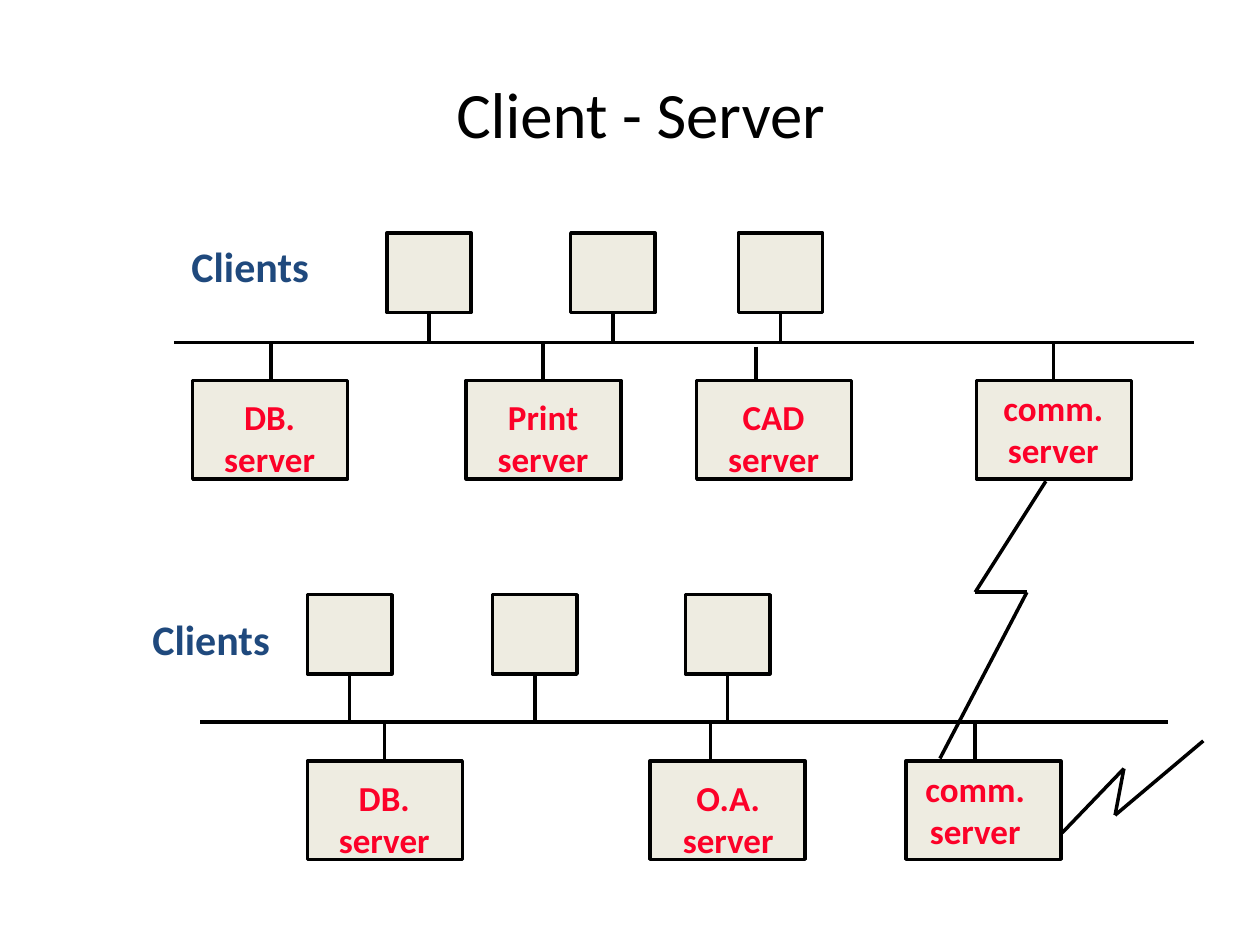
"""Build the Client - Server network slide."""
from itertools import pairwise

from lxml import etree
from pptx import Presentation
from pptx import util as u
from pptx.dml.color import RGBColor
from pptx.enum import shapes, text
from pptx.oxml.ns import qn

COLORS = {"ink": "000000", "box": "EEECE1", "heading": "1F497D", "server": "FC0128"}
FONT = "Calibri"
CLIENT_SIZE = (0.67, 0.63)
SERVER_SIZE = (1.23, 0.78)

NETWORKS = [
    {
        "bus": (1.38, 9.48, 2.72),
        "heading": (1.47, 1.89),
        "client_top": 1.85,
        "clients": [3.07, 4.53, 5.86],
        "server_top": 3.02,
        "servers": [
            {"name": "DB.", "left": 1.53, "label": 2.14, "wire": 2.15},
            {"name": "Print", "left": 3.7, "label": 4.31, "wire": 4.31},
            {"name": "CAD", "left": 5.53, "label": 6.14, "wire": 6, "gap": 0.03},
            {"name": "comm.", "left": 7.75, "label": 8.36, "wire": 8.36},
        ],
    },
    {
        "bus": (1.59, 9.27, 5.73),
        "heading": (1.16, 4.85),
        "client_top": 4.72,
        "clients": [2.44, 3.91, 5.44],
        "server_top": 6.04,
        "servers": [
            {"name": "DB.", "left": 2.44, "label": 3.05, "wire": 3.05},
            {"name": "O.A.", "left": 5.16, "label": 5.78, "wire": 5.64},
            {"name": "comm.", "left": 7.19, "label": 7.74, "wire": 7.74},
        ],
    },
]

RADIO_LINKS = [
    [(8.3, 3.82), (7.74, 4.7), (8.15, 4.7), (7.46, 6.02)],
    [(8.43, 6.61), (8.92, 6.1), (8.85, 6.47), (9.55, 5.88)],
]


def color(name):
    """Return the named palette colour."""
    return RGBColor.from_string(COLORS[name])


def add_box(slide, left, top, size):
    """Add an outlined rectangle."""
    box = slide.shapes.add_shape(
        shapes.MSO_SHAPE.RECTANGLE, *map(u.Inches, (left, top, *size)))
    box.shadow.inherit = False
    box.fill.solid()
    box.fill.fore_color.rgb = color("box")
    box.line.color.rgb = color("ink")
    box.line.width = u.Pt(2)


def add_line(slide, start, end):
    """Add a straight black line without shadow."""
    line = slide.shapes.add_connector(
        shapes.MSO_CONNECTOR.STRAIGHT, *map(u.Inches, (*start, *end)))
    line.line.color.rgb = color("ink")
    line.line.width = u.Pt(2)
    etree.SubElement(line._element.spPr, qn("a:effectLst"))


def add_label(slide, place, lines, size, ink, bold=True, wrap=False,
              insets=(0.05, 0.02), align=text.PP_ALIGN.CENTER,
              anchor=text.MSO_ANCHOR.TOP):
    """Add a text box with one paragraph per line and return it."""
    box = slide.shapes.add_textbox(*map(u.Inches, place))
    frame = box.text_frame
    frame.word_wrap = wrap
    frame.vertical_anchor = anchor
    frame.margin_left = frame.margin_right = u.Inches(insets[0])
    frame.margin_top = frame.margin_bottom = u.Inches(insets[1])
    for index, words in enumerate(lines):
        para = frame.add_paragraph() if index else frame.paragraphs[0]
        para.alignment = align
        span = para.add_run()
        span.text = words
        span.font.name = FONT
        span.font.size = u.Pt(size)
        span.font.bold = bold
        span.font.color.rgb = color(ink)
    return box


def add_client(slide, left, top, bus_y):
    """Add a client box wired down to the bus."""
    width, height = CLIENT_SIZE
    add_box(slide, left, top, CLIENT_SIZE)
    middle = left + width / 2
    add_line(slide, (middle, top + height), (middle, bus_y))


def add_server(slide, server, top, bus_y):
    """Add a labelled server box wired up to the bus."""
    add_box(slide, server["left"], top, SERVER_SIZE)
    is_comm = server["name"] == "comm."
    width, drop = (0.9, 0.03) if is_comm else (0.84, 0.1)
    place = (server["label"] - width / 2, top + drop, width, 0.71)
    label = add_label(slide, place, [server["name"], "server"], 20, "server")
    if is_comm:
        label.fill.solid()
        label.fill.fore_color.rgb = color("box")
    wire = server["wire"]
    add_line(slide, (wire, bus_y + server.get("gap", 0)), (wire, top - 0.01))


def add_network(slide, network):
    """Add one bus with its heading, clients and servers."""
    left, right, bus_y = network["bus"]
    add_line(slide, (left, bus_y), (right, bus_y))
    add_label(slide, (*network["heading"], 1.1, 0.44), ["Clients"], 24,
              "heading", align=text.PP_ALIGN.LEFT)
    for client_left in network["clients"]:
        add_client(slide, client_left, network["client_top"], bus_y)
    for server in network["servers"]:
        add_server(slide, server, network["server_top"], bus_y)


def main():
    """Build and save the deck."""
    deck = Presentation()
    deck.slide_width, deck.slide_height = u.Inches(10), u.Inches(7.5)
    slide = deck.slides.add_slide(deck.slide_layouts[6])
    add_label(slide, (1.5, 0.33, 7.17, 0.92), ["Client - Server"], 37, "ink",
              bold=False, wrap=True, insets=(0.09, 0.05),
              anchor=text.MSO_ANCHOR.BOTTOM)
    for network in NETWORKS:
        add_network(slide, network)
    for points in RADIO_LINKS:
        for start, end in pairwise(points):
            add_line(slide, start, end)
    deck.save("out.pptx")


if __name__ == "__main__":
    main()
